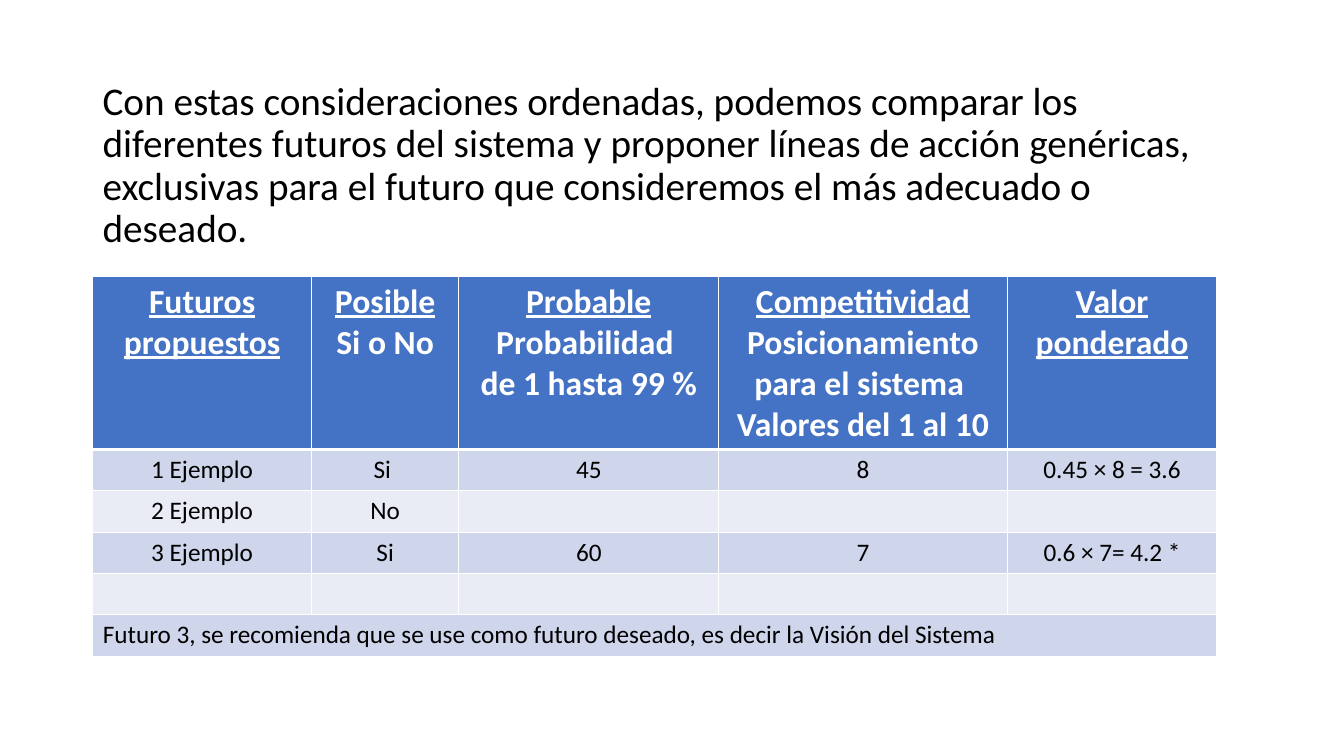
from lxml.etree import SubElement
from pptx import Presentation
from pptx.dml.color import RGBColor
from pptx.enum.text import PP_ALIGN
from pptx.oxml.ns import qn
from pptx.util import Inches, Pt

FONT = "Calibri"
WHITE, BLACK, BLUE = "FFFFFF", "000000", "4472C4"
BANDS = ["CFD5EA", "E9EBF5"]
COLUMNS = [2.17, 1.46, 2.58, 2.86, 2.08]
HEADER_HEIGHT, ROW_HEIGHT = 1.72, 0.41

INTRO = (
    "Con estas consideraciones ordenadas, podemos comparar los diferentes futuros "
    "del sistema y proponer líneas de acción genéricas, exclusivas para el futuro "
    "que consideremos el más adecuado o deseado."
)
HEADERS = [
    "Futuros propuestos",
    "Posible\nSi o No",
    "Probable\nProbabilidad \nde 1 hasta 99 %",
    "Competitividad\nPosicionamiento para el sistema \nValores del 1 al 10",
    "Valor ponderado",
]
FUTURES = [
    ["1 Ejemplo", "Si ", "45", "8", "0.45 × 8 = 3.6"],
    ["2 Ejemplo", "No", "", "", ""],
    ["3 Ejemplo", "Si", "60", "7", "0.6 × 7= 4.2 *"],
    [""] * 5,
]
CONCLUSION = (
    "Futuro 3, se recomienda que se use como futuro deseado, "
    "es decir la Visión del Sistema"
)


def color(value):
    """Turn a hex string into a colour."""
    return RGBColor.from_string(value)


def style_font(font, size, value, bold=False):
    """Set the face, size, colour and weight of a font."""
    font.name = FONT
    font.size = Pt(size)
    font.bold = bold
    font.color.rgb = color(value)


def set_borders(cell, bottom):
    """Draw white lines around a cell, the bottom one as thick as given."""
    tcPr = cell._tc.get_or_add_tcPr()
    for position, (side, width) in enumerate(
        [("L", 1), ("R", 1), ("T", 1), ("B", bottom)]
    ):
        line = tcPr.makeelement(qn(f"a:ln{side}"), {"w": str(Pt(width))})
        fill = SubElement(line, qn("a:solidFill"))
        SubElement(fill, qn("a:srgbClr"), val=WHITE)
        tcPr.insert(position, line)


def fill_cell(cell, text, fill, header=False, align=PP_ALIGN.CENTER):
    """Write and format one table cell."""
    cell.fill.solid()
    cell.fill.fore_color.rgb = color(fill)
    set_borders(cell, 3 if header else 1)
    cell.text_frame.text = text
    for i, p in enumerate(cell.text_frame.paragraphs):
        p.alignment = align
        for r in p.runs:
            style_font(r.font, 24 if header else 18, WHITE if header else BLACK, header)
            r.font.underline = header and i == 0


def add_intro(s, left, top, width, height):
    """Place the opening paragraph in the given box."""
    tf = s.shapes.add_textbox(
        Inches(left), Inches(top), Inches(width), Inches(height)
    ).text_frame
    tf.word_wrap = True
    tf.text = INTRO
    p = tf.paragraphs[0]
    p.line_spacing = 0.9
    p.space_before = Pt(10)
    style_font(p.runs[0].font, 28, BLACK)


def add_futures_table(s, left, top):
    """Place the comparison of futures with its closing row."""
    rows = [HEADERS] + FUTURES + [[CONCLUSION] + [""] * (len(COLUMNS) - 1)]
    height = HEADER_HEIGHT + ROW_HEIGHT * (len(rows) - 1)
    table = s.shapes.add_table(
        len(rows), len(COLUMNS),
        Inches(left), Inches(top), Inches(sum(COLUMNS)), Inches(height),
    ).table
    for column, width in zip(table.columns, COLUMNS):
        column.width = Inches(width)
    last = len(rows) - 1
    for i, values in enumerate(rows):
        header = i == 0
        table.rows[i].height = Inches(HEADER_HEIGHT if header else ROW_HEIGHT)
        fill = BLUE if header else BANDS[(i - 1) % 2]
        align = PP_ALIGN.LEFT if i == last else PP_ALIGN.CENTER
        for j, text in enumerate(values):
            fill_cell(table.cell(i, j), text, fill, header, align)
    table.cell(last, 0).merge(table.cell(last, len(COLUMNS) - 1))


def main():
    """Build the slide and save it."""
    prs = Presentation()
    prs.slide_width, prs.slide_height = Inches(13.33), Inches(7.5)
    s = prs.slides.add_slide(prs.slide_layouts[6])
    add_intro(s, 0.92, 0.76, 11.5, 6)
    add_futures_table(s, 0.92, 2.74)
    prs.save("out.pptx")


if __name__ == "__main__":
    main()
